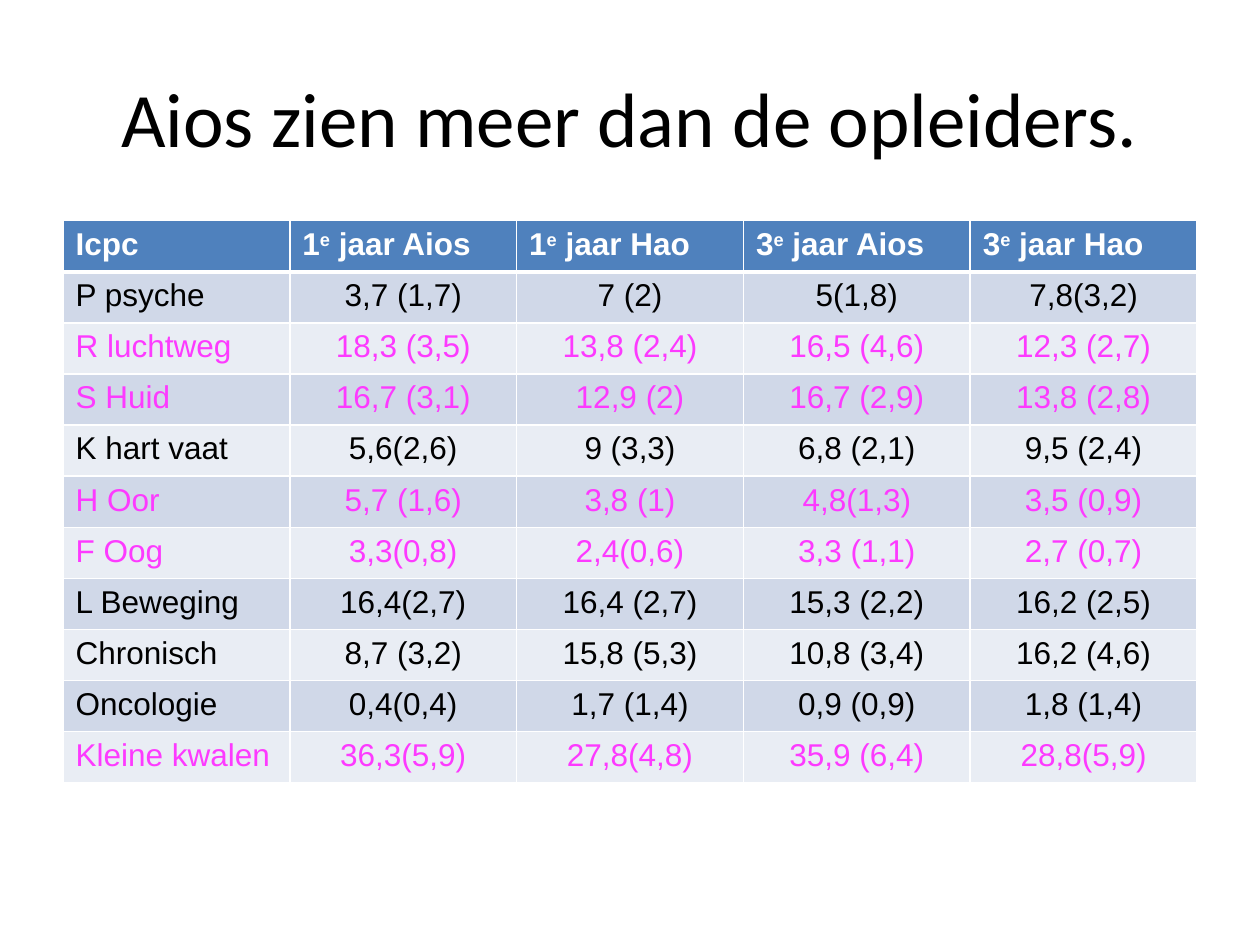
from dataclasses import dataclass

from lxml import etree
from pptx import Presentation
from pptx import util as u
from pptx.dml import color
from pptx.enum import text
from pptx.oxml import ns


@dataclass(frozen=True)
class Theme:
    head: str = "4F81BD"
    bands: tuple = ("D0D8E8", "E9EDF4")
    ink: str = "000000"
    mark: str = "FD3AFF"
    white: str = "FFFFFF"
    title: int = 44
    body: int = 18


theme = Theme()
mid = text.PP_ALIGN.CENTER


def write(frame, words, size=theme.body, font="Arial", ink=theme.ink,
          bold=False, align=text.PP_ALIGN.LEFT):
    """Fill a frame; text between carets is set as superscript."""
    para = frame.paragraphs[0]
    para.alignment = align
    for i, part in enumerate(words.split("^")):
        run = para.add_run()
        run.text = part
        run.font.size = u.Pt(size)
        run.font.name = font
        run.font.bold = bold
        run.font.color.rgb = color.RGBColor.from_string(ink)
        if i % 2:
            run.font._element.set("baseline", "30000")


def edge(cell, side, width):
    """Draw one white cell border."""
    props = cell._tc.get_or_add_tcPr()
    line = etree.SubElement(props, ns.qn(f"a:ln{side}"), w=str(u.Pt(width)))
    fill = etree.SubElement(line, ns.qn("a:solidFill"))
    etree.SubElement(fill, ns.qn("a:srgbClr"), val=theme.white)


deck = Presentation()
deck.slide_width, deck.slide_height = u.Cm(25.4), u.Cm(19.05)
slide = deck.slides.add_slide(deck.slide_layouts[6])

# Title
box = slide.shapes.add_textbox(u.Cm(1.27), u.Cm(0.76), u.Cm(22.86), u.Cm(3.18))
box.text_frame.word_wrap = True
box.text_frame.vertical_anchor = text.MSO_ANCHOR.MIDDLE
write(box.text_frame, "Aios zien meer dan de opleiders.",
      size=theme.title, font="Calibri", align=mid)

# Table content
rows = [
    ("Icpc", "1^e^ jaar Aios", "1^e^ jaar Hao", "3^e^ jaar Aios", "3^e^ jaar Hao"),
    ("P psyche", "3,7 (1,7)", "7 (2)", "5(1,8)", "7,8(3,2)"),
    ("R luchtweg", "18,3 (3,5)", "13,8 (2,4)", "16,5 (4,6)", "12,3 (2,7)"),
    ("S Huid", "16,7 (3,1)", "12,9 (2)", "16,7 (2,9)", "13,8 (2,8)"),
    ("K hart vaat", "5,6(2,6)", "9 (3,3)", "6,8 (2,1)", "9,5 (2,4)"),
    ("H Oor", "5,7 (1,6)", "3,8 (1)", "4,8(1,3)", "3,5 (0,9)"),
    ("F Oog", "3,3(0,8)", "2,4(0,6)", "3,3 (1,1)", "2,7 (0,7)"),
    ("L Beweging", "16,4(2,7)", "16,4 (2,7)", "15,3 (2,2)", "16,2 (2,5)"),
    ("Chronisch", "8,7 (3,2)", "15,8 (5,3)", "10,8 (3,4)", "16,2 (4,6)"),
    ("Oncologie", "0,4(0,4)", "1,7 (1,4)", "0,9 (0,9)", "1,8 (1,4)"),
    ("Kleine kwalen", "36,3(5,9)", "27,8(4,8)", "35,9 (6,4)", "28,8(5,9)"),
]
marked = {"R luchtweg", "S Huid", "H Oor", "F Oog", "Kleine kwalen"}

# Table grid
high = u.Cm(1.03)
grid = slide.shapes.add_table(len(rows), len(rows[0]), u.Cm(1.27), u.Cm(4.45),
                              u.Cm(22.86), high * len(rows)).table

# Cells: header row, then banded rows with the marked ones in pink
for r, row in enumerate(rows):
    grid.rows[r].height = high
    top = r == 0
    back = theme.head if top else theme.bands[(r - 1) % 2]
    ink = theme.white if top else theme.mark if row[0] in marked else theme.ink
    for c, words in enumerate(row):
        cell = grid.cell(r, c)
        for side in "LRTB":
            thick = (top and side == "B") or (r == 1 and side == "T")
            edge(cell, side, 3 if thick else 1)
        cell.fill.solid()
        cell.fill.fore_color.rgb = color.RGBColor.from_string(back)
        align = mid if c and not top else text.PP_ALIGN.LEFT
        write(cell.text_frame, words, ink=ink, bold=top, align=align)

deck.save("out.pptx")
